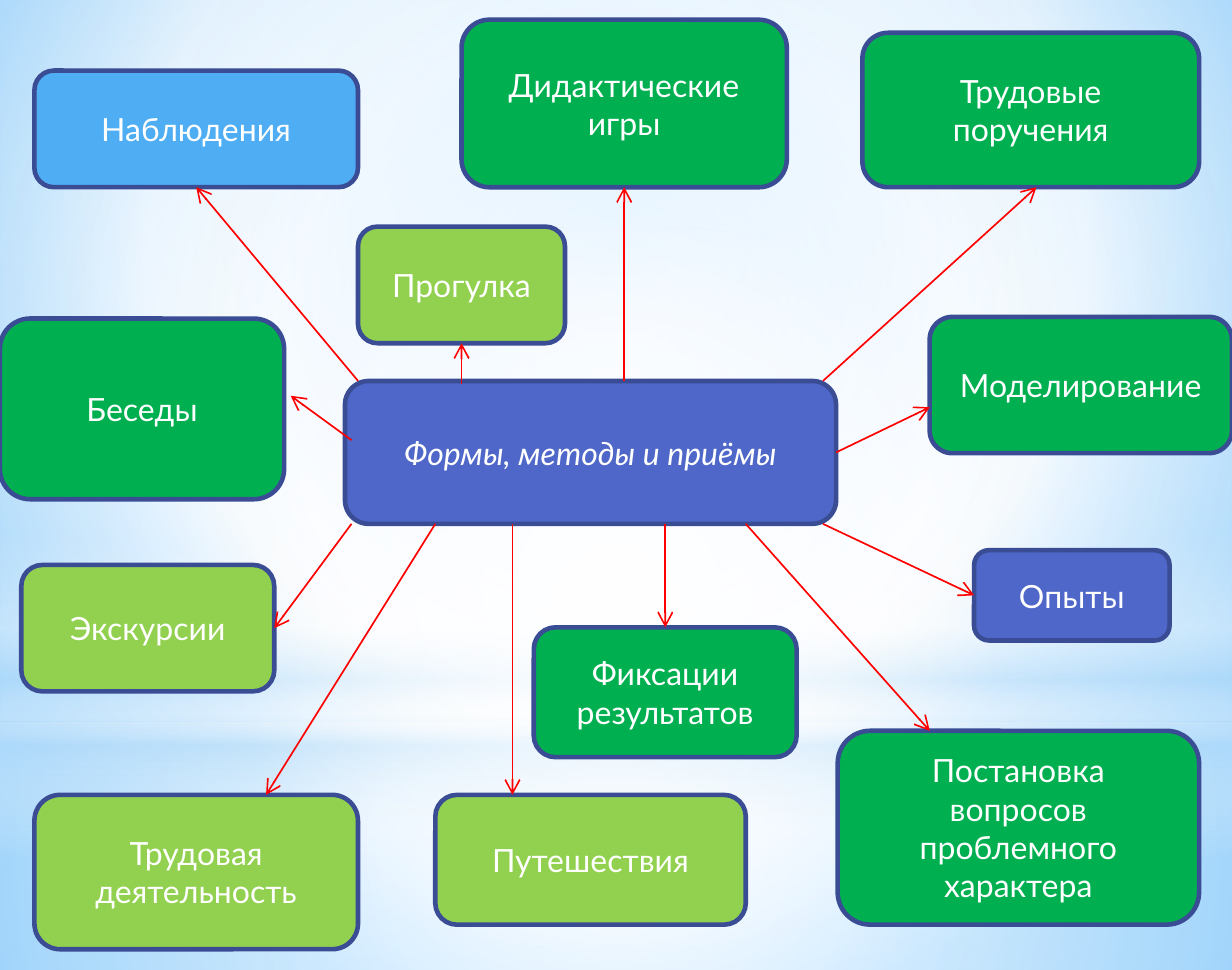
from lxml import etree
from pptx import Presentation
from pptx.dml.color import RGBColor
from pptx.enum.shapes import MSO_CONNECTOR, MSO_SHAPE
from pptx.enum.text import MSO_ANCHOR, PP_ALIGN
from pptx.oxml.ns import qn
from pptx.util import Inches, Pt

RECTANGLE, ELLIPSE = MSO_SHAPE.RECTANGLE, MSO_SHAPE.OVAL
ROUNDED = MSO_SHAPE.ROUNDED_RECTANGLE
STRAIGHT = MSO_CONNECTOR.STRAIGHT
CENTER, MIDDLE = PP_ALIGN.CENTER, MSO_ANCHOR.MIDDLE
TOP, LEFT, BOTTOM, RIGHT = range(4)

COLORS = {
    "indigo": "4E67C8", "outline": "3A4C94", "blue": "4FADF3",
    "green": "00B050", "lime": "92D050", "arrow": "FF0000",
    "white": "FFFFFF", "haze": "B4DCFA", "sky": "9ED5FF", "deep sky": "5BB9FF",
}
MIDPOINT = (50, 50, 50, 50)

# Backdrop: shape, box, stops (position, colour, opacity), focus or None if linear
BACKDROP = [
    (RECTANGLE, (0, 4.4, 7.5, 1.51),
     [(0, "white", 91), (37, "white", 76), (100, "haze", 79)], MIDPOINT),
    (RECTANGLE, (0, 0, 7.5, 4.4),
     [(0, "white", 89), (48, "white", 62), (100, "haze", 79)], MIDPOINT),
    (RECTANGLE, (0, 3.25, 7.5, 1.97),
     [(0, "white", 0), (29, "white", 30), (45, "haze", 40),
      (55, "white", 26), (65, "haze", 60), (100, "white", 0)], None),
    (ELLIPSE, (0, 1.38, 7.5, 4.4),
     [(0, "white", 100), (56, "white", 0)], MIDPOINT),
]

# Topics: text, colour, box, arrow start, arrow end (a point or a side to join)
TOPICS = [
    ("Наблюдения", "blue", (0.21, 0.43, 1.97, 0.71), (2.18, 2.32), BOTTOM),
    ("Трудовые\nпоручения", "green", (5.25, 0.2, 2.05, 0.94),
     (5.01, 2.32), (6.31, 1.14)),
    ("Опыты", "indigo", (5.93, 3.35, 1.19, 0.55), (5.01, 3.19), LEFT),
    ("Дидактические\nигры", "green", (2.81, 0.12, 1.98, 1.02), (3.8, 2.32), BOTTOM),
    ("Моделирование", "green", (5.66, 1.93, 1.84, 0.83), RIGHT, (5.66, 2.48)),
    ("Фиксации\nрезультатов", "green", (3.25, 3.82, 1.6, 0.79), (4.05, 3.19), TOP),
    ("Постановка вопросов\nпроблемного\nхарактера", "green",
     (5.1, 4.45, 2.2, 1.18), (4.54, 3.19), (5.66, 4.45)),
    ("Беседы", "green", (0, 1.94, 1.73, 1.1), (2.14, 2.68), (1.77, 2.41)),
    ("Прогулка", "lime", (2.18, 1.38, 1.26, 0.71), (2.81, 2.34), BOTTOM),
    ("Путешествия", "lime", (2.65, 4.84, 1.89, 0.79), (3.12, 3.19), (3.12, 4.84)),
    ("Трудовая\nдеятельность", "lime", (0.21, 4.84, 1.97, 0.94),
     (2.65, 3.19), (1.62, 4.84)),
    ("Экскурсии", "lime", (0.13, 3.44, 1.54, 0.77), (2.14, 3.19), RIGHT),
]


def rgb(name):
    return RGBColor.from_string(COLORS[name])


class MindMap:
    font_name = "Lato"
    font_size = Pt(14)
    outline_width = Pt(2)
    arrow_width = Pt(0.75)

    def __init__(self, slide):
        self.slide = slide

    def gradient(self, fill, element, stops, focus):
        fill.gradient()
        gradient = element.find(".//" + qn("a:gradFill"))
        for child in list(gradient):
            gradient.remove(child)
        stop_list = etree.SubElement(gradient, qn("a:gsLst"))
        for position, name, opacity in stops:
            stop = etree.SubElement(stop_list, qn("a:gs"), pos=str(position * 1000))
            color = etree.SubElement(stop, qn("a:srgbClr"), val=COLORS[name])
            if opacity < 100:
                etree.SubElement(color, qn("a:alpha"), val=str(opacity * 1000))
        if focus is None:
            etree.SubElement(gradient, qn("a:lin"), ang="5400000", scaled="0")
        else:
            circle = etree.SubElement(gradient, qn("a:path"), {"path": "circle"})
            sides = {side: str(value * 1000) for side, value in zip("ltrb", focus)}
            etree.SubElement(circle, qn("a:fillToRect"), sides)

    def background(self, stops, focus):
        self.gradient(self.slide.background.fill, self.slide.element, stops, focus)

    def shape(self, kind, box):
        shape = self.slide.shapes.add_shape(kind, *map(Inches, box))
        shape.shadow.inherit = False
        return shape

    def glow(self, kind, box, stops, focus):
        shape = self.shape(kind, box)
        shape.line.fill.background()
        self.gradient(shape.fill, shape.element, stops, focus)

    def box(self, text, color, box, italic=False):
        shape = self.shape(ROUNDED, box)
        shape.fill.solid()
        shape.fill.fore_color.rgb = rgb(color)
        shape.line.color.rgb = rgb("outline")
        shape.line.width = self.outline_width
        frame = shape.text_frame
        frame.word_wrap = True
        frame.vertical_anchor = MIDDLE
        frame.text = text
        for paragraph in frame.paragraphs:
            paragraph.alignment = CENTER
            for run in paragraph.runs:
                run.font.name = self.font_name
                run.font.size = self.font_size
                run.font.italic = italic
                run.font.color.rgb = rgb("white")
        return shape

    def arrow(self, source, start, target, end):
        connector = self.slide.shapes.add_connector(STRAIGHT, 0, 0, 0, 0)
        if isinstance(start, int):
            connector.begin_connect(source, start)
        else:
            connector.begin_x, connector.begin_y = map(Inches, start)
        if isinstance(end, int):
            connector.end_connect(target, end)
        else:
            connector.end_x, connector.end_y = map(Inches, end)
        connector.line.color.rgb = rgb("arrow")
        connector.line.width = self.arrow_width
        properties = connector.element.spPr
        etree.SubElement(properties.find(qn("a:ln")), qn("a:tailEnd"), type="arrow")
        etree.SubElement(properties, qn("a:effectLst"))


def main():
    presentation = Presentation()
    presentation.slide_width = Inches(7.5)
    presentation.slide_height = Inches(189 / 32)
    slide = presentation.slides.add_slide(presentation.slide_layouts[6])
    mind_map = MindMap(slide)

    # Background and soft glows
    mind_map.background(
        [(0, "sky", 100), (60, "white", 100), (100, "deep sky", 100)],
        (20, 10, 20, 60))
    for kind, box, stops, focus in BACKDROP:
        mind_map.glow(kind, box, stops, focus)

    # Central theme
    center = mind_map.box("Формы, методы и приёмы", "indigo",
                          (2.1, 2.32, 2.99, 0.87), italic=True)

    # Topics with their arrows
    for text, color, box, start, end in TOPICS:
        topic = mind_map.box(text, color, box)
        mind_map.arrow(center, start, topic, end)

    presentation.save("out.pptx")


if __name__ == "__main__":
    main()
